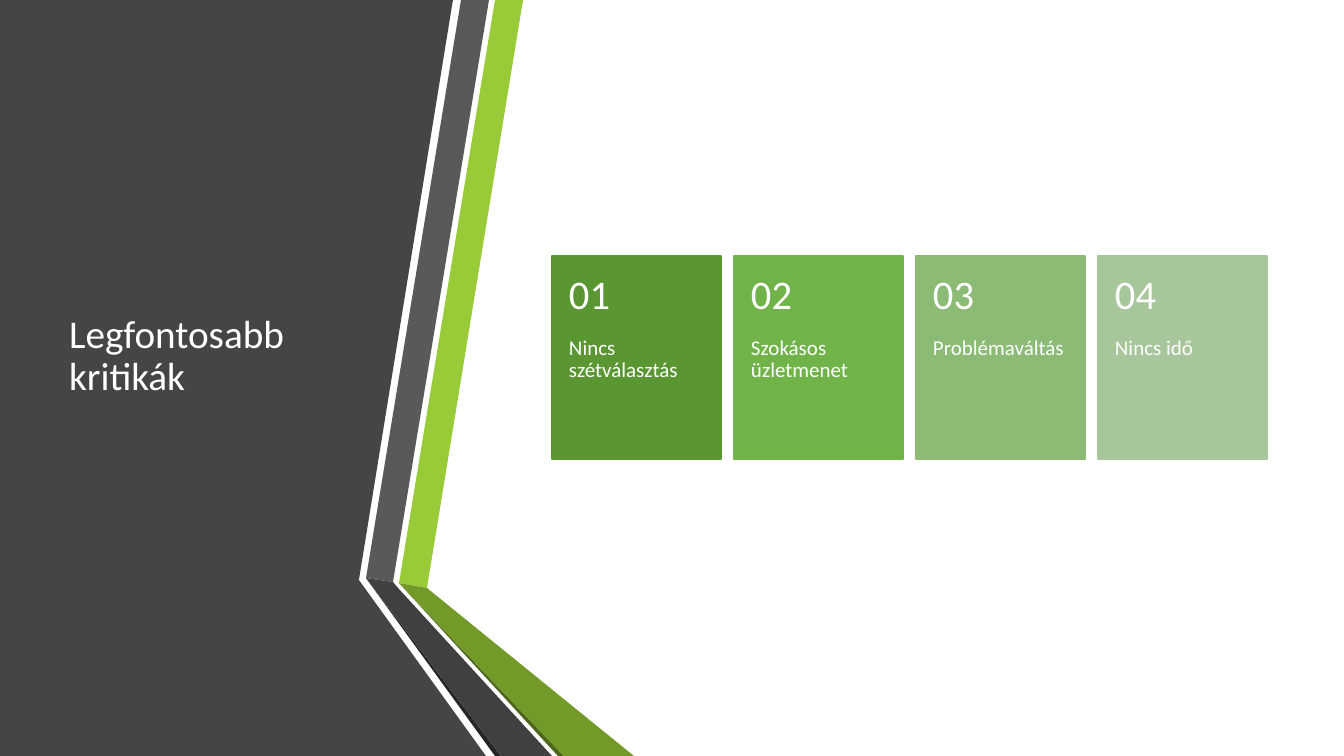
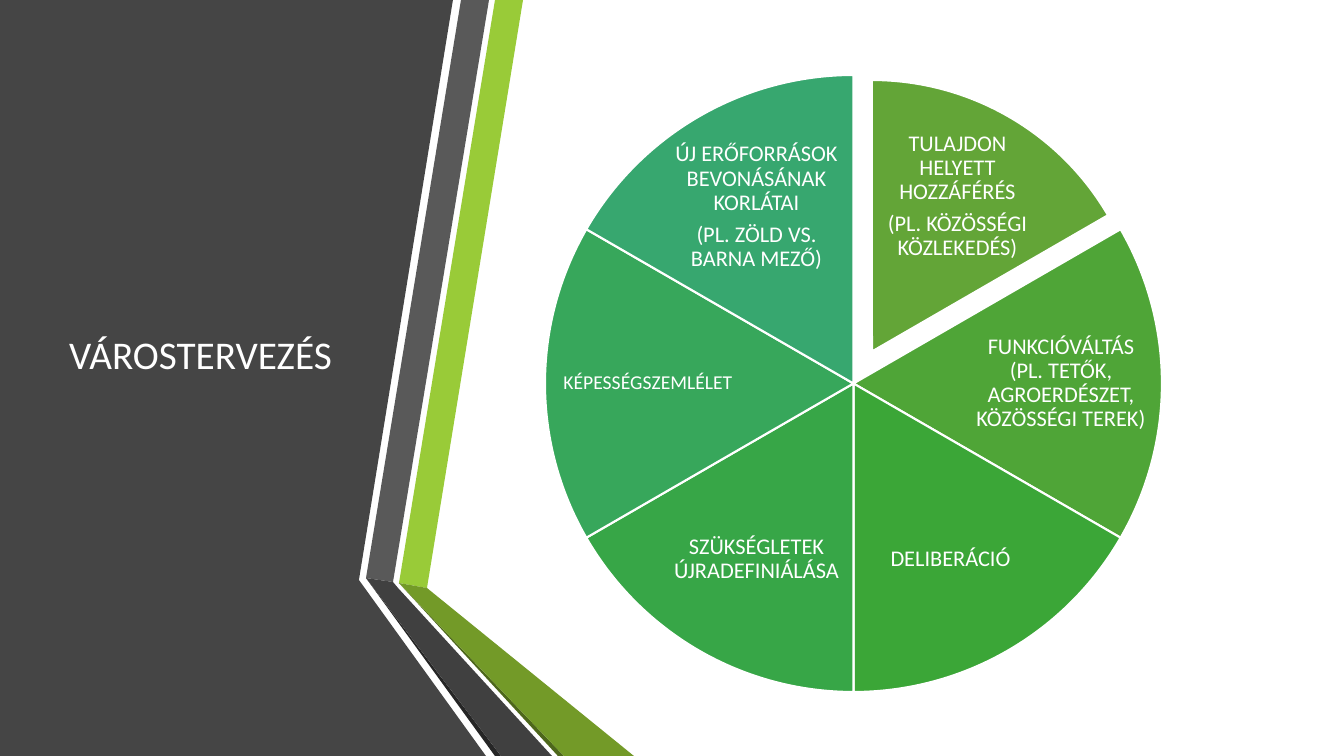
from pptx import Presentation
from pptx.dml.color import RGBColor
from pptx.enum.shapes import MSO_SHAPE
from pptx.enum.text import MSO_ANCHOR, MSO_AUTO_SIZE, PP_ALIGN
from pptx.util import Emu, Pt

# Lengths are px on a 1344 x 756 slide
SLIDE_WIDTH, SLIDE_HEIGHT = 1344, 756
SCALE = 12192000 / SLIDE_WIDTH
FONT, WHITE = "Calibri", "FFFFFF"
TITLE_BOX = (59, 76, 306, 562)

# Shared band on the left: colour and corner points
RIBBONS = [
    ("454545", [(0, 0), (453, 0), (359, 580), (486, 756), (0, 756)]),
    ("99CB38", [(399, 583), (427, 588), (523, 0), (495, 0)]),
    ("595959", [(489, 0), (461, 0), (366, 578), (393, 582)]),
    ("262626", [(366, 578), (495, 756), (501, 756)]),
    ("4D671B", [(399, 583), (558, 756), (564, 756)]),
    ("739A28", [(399, 583), (564, 756), (634, 756), (427, 588)]),
    ("404040", [(552, 756), (398, 588), (393, 582), (366, 578), (501, 756)]),
]

# Slide 1: numbered cards
CRITIQUE_TITLE = "Legfontosabb kritikák"
CARDS = [
    ("Nincs szétválasztás", "5A9632"),
    ("Szokásos üzletmenet", "6FB349"),
    ("Problémaváltás", "8BBB74"),
    ("Nincs idő", "A8C69C"),
]
CARD_LEFT, CARD_TOP, CARD_WIDTH, CARD_HEIGHT = 552, 256, 169, 203
CARD_PITCH, NUMBER_HEIGHT = 182, 81

# Slide 2: wedges clockwise from the top (paragraphs, size, colour, text box)
PLANNING_TITLE = "VÁROSTERVEZÉS"
WEDGES = [
    (["TULAJDON HELYETT HOZZÁFÉRÉS", "(PL. KÖZÖSSÉGI KÖZLEKEDÉS)"],
     16, "63A537", (878, 138, 159, 117)),
    (["FUNKCIÓVÁLTÁS (PL. TETŐK, AGROERDÉSZET, KÖZÖSSÉGI TEREK)"],
     16, "4FA537", (968, 321, 186, 125)),
    (["DELIBERÁCIÓ"], 16, "3BA637", (861, 493, 179, 132)),
    (["SZÜKSÉGLETEK ÚJRADEFINIÁLÁSA"], 16, "37A647", (667, 493, 179, 132)),
    (["KÉPESSÉGSZEMLÉLET"], 14, "37A75B", (555, 321, 186, 125)),
    (["ÚJ ERŐFORRÁSOK BEVONÁSÁNAK KORLÁTAI", "(PL. ZÖLD VS. BARNA MEZŐ)"],
     16, "37A76F", (667, 141, 179, 132)),
]
WHEEL = (545, 75, 617, 617)
PULLED_OUT = (599, 80, 546, 543)
ANGLE_UNIT = 0.6  # adjustment value of one degree


def px(length):
    return Emu(round(length * SCALE))


def color(hex_string):
    return RGBColor.from_string(hex_string)


def paint(shape, fill, line=None, line_width=1):
    shape.shadow.inherit = False
    shape.fill.solid()
    shape.fill.fore_color.rgb = color(fill)
    if line:
        shape.line.color.rgb = color(line)
        shape.line.width = Pt(line_width)
    else:
        shape.line.fill.background()


def write(box, paragraphs, size, align=PP_ALIGN.LEFT, anchor=MSO_ANCHOR.MIDDLE,
          insets=None, space_after=0):
    frame = box.text_frame
    frame.word_wrap = True
    frame.auto_size = MSO_AUTO_SIZE.NONE
    frame.vertical_anchor = anchor
    if insets:
        (frame.margin_left, frame.margin_top,
         frame.margin_right, frame.margin_bottom) = map(px, insets)
    for index, text in enumerate(paragraphs):
        para = frame.add_paragraph() if index else frame.paragraphs[0]
        para.alignment = align
        para.line_spacing = 0.9
        para.space_before = Pt(0)
        para.space_after = Pt(space_after)
        span = para.add_run()
        span.text = text
        span.font.name = FONT
        span.font.size = Pt(size)
        span.font.color.rgb = color(WHITE)


def add_text(page, place, paragraphs, size, **style):
    box = page.shapes.add_textbox(*map(px, place))
    write(box, paragraphs, size, space_after=size * 0.35, **style)


def add_page(deck, title):
    page = deck.slides.add_slide(deck.slide_layouts[5])
    write(page.shapes.title, [title], 28)
    return page


def set_up_layout(page):
    """Place the title and move the ribbons into the layout, behind it."""
    title = page.slide_layout.placeholders[0]
    title.left, title.top, title.width, title.height = map(px, TITLE_BOX)
    for number, (fill, points) in enumerate(RIBBONS):
        builder = page.shapes.build_freeform(*points[0], scale=SCALE)
        builder.add_line_segments(points[1:], close=True)
        ribbon = builder.convert_to_shape()
        paint(ribbon, fill)
        ribbon.element.nvSpPr.cNvPr.set("id", str(100 + number))
        title.element.addprevious(ribbon.element)


def add_cards(page):
    for index, (label, fill) in enumerate(CARDS):
        left = CARD_LEFT + index * CARD_PITCH
        place = (left, CARD_TOP, CARD_WIDTH, CARD_HEIGHT)
        card = page.shapes.add_shape(MSO_SHAPE.RECTANGLE, *map(px, place))
        paint(card, fill, line=fill)
        add_text(page, (left, CARD_TOP + NUMBER_HEIGHT, CARD_WIDTH,
                        CARD_HEIGHT - NUMBER_HEIGHT),
                 [label], 15, anchor=MSO_ANCHOR.TOP, insets=(17, 0, 17, 36))
        add_text(page, (left, CARD_TOP, CARD_WIDTH, NUMBER_HEIGHT),
                 [f"{index + 1:02}"], 29, insets=(17, 18, 17, 18))


def add_wheel(page):
    step = 360 / len(WEDGES)
    for index, (paragraphs, size, fill, text_box) in enumerate(WEDGES):
        place = WHEEL if index else PULLED_OUT
        wedge = page.shapes.add_shape(MSO_SHAPE.PIE, *map(px, place))
        start = 270 + index * step
        wedge.adjustments[0] = start % 360 * ANGLE_UNIT
        wedge.adjustments[1] = (start + step) % 360 * ANGLE_UNIT
        paint(wedge, fill, line=WHITE, line_width=1.5)
        add_text(page, text_box, paragraphs, size,
                 align=PP_ALIGN.CENTER, insets=(2, 2, 2, 2))


def main():
    deck = Presentation()
    deck.slide_width, deck.slide_height = px(SLIDE_WIDTH), px(SLIDE_HEIGHT)
    critique_page = add_page(deck, CRITIQUE_TITLE)
    set_up_layout(critique_page)
    add_cards(critique_page)
    add_wheel(add_page(deck, PLANNING_TITLE))
    deck.save("out.pptx")


if __name__ == "__main__":
    main()
